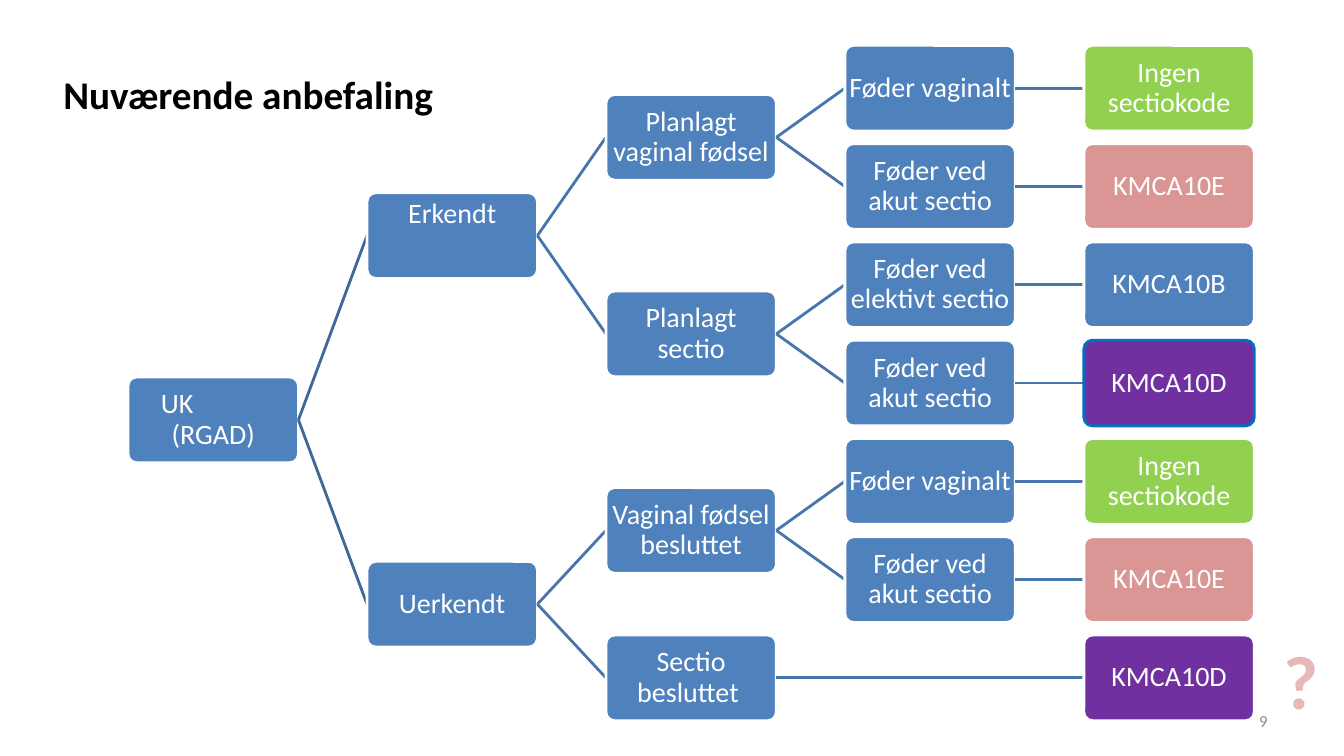
"""Build the decision tree slide of current section coding recommendations."""
from lxml import etree
from pptx import Presentation
from pptx.dml.color import RGBColor
from pptx.enum.shapes import MSO_CONNECTOR as CONN, MSO_SHAPE as SHAPE
from pptx.enum.text import MSO_ANCHOR as ANCHOR, PP_ALIGN as ALIGN
from pptx.oxml import parse_xml
from pptx.oxml.ns import qn
from pptx.util import Inches, Pt

WHITE = RGBColor(0xFF, 0xFF, 0xFF)
BLACK = RGBColor(0, 0, 0)
GRAY = RGBColor(0x8C, 0x8C, 0x8C)
BLUE = RGBColor(0x4F, 0x81, 0xBD)
GREEN = RGBColor(0x92, 0xD0, 0x50)
ROSE = RGBColor(0xD9, 0x96, 0x94)
PALE_ROSE = RGBColor(0xE6, 0xB9, 0xB8)
PURPLE = RGBColor(0x70, 0x30, 0xA0)
EDGE_BLUE = RGBColor(0x00, 0x70, 0xC0)
ROOT_LINE = RGBColor(0x3F, 0x67, 0x97)
TREE_LINE = RGBColor(0x48, 0x75, 0xAC)

LEFT, TOP = 1.27, 0.45
COL_STEP, ROW_STEP = 2.37, 0.975
BOX_W, BOX_H = 1.69, 0.85


def write(sp, text, size=20, color=WHITE, bold=False, align=ALIGN.CENTER,
          anchor=ANCHOR.MIDDLE, wrap=True, inset=None, spacing=None):
    tf = sp.text_frame
    tf.word_wrap = wrap
    tf.vertical_anchor = anchor
    if inset is not None:
        tf.margin_left = tf.margin_right = Inches(inset)
        tf.margin_top = tf.margin_bottom = Inches(inset)
    for i, line in enumerate(text.split("\n")):
        p = tf.add_paragraph() if i else tf.paragraphs[0]
        p.alignment = align
        p.line_spacing = spacing
        r = p.add_run()
        r.text = line
        r.font.name = "Calibri"
        r.font.size = Pt(size)
        r.font.bold = bold
        r.font.color.rgb = color
    return tf


prs = Presentation()
prs.slide_width, prs.slide_height = Inches(13.33), Inches(7.5)
s = prs.slides.add_slide(prs.slide_layouts[6])

# name, column, row, parent, text, fill
nodes = [
    ("root", 0, 3.375, None, "UK\n(RGAD)", BLUE),
    ("known", 1, 1.5, "root", "Erkendt", BLUE),
    ("plan_vag", 2, 0.5, "known", "Planlagt vaginal fødsel", BLUE),
    ("birth0", 3, 0, "plan_vag", "Føder vaginalt", BLUE),
    ("code0", 4, 0, "birth0", "Ingen sectiokode", GREEN),
    ("birth1", 3, 1, "plan_vag", "Føder ved akut sectio", BLUE),
    ("code1", 4, 1, "birth1", "KMCA10E", ROSE),
    ("plan_sec", 2, 2.5, "known", "Planlagt sectio", BLUE),
    ("birth2", 3, 2, "plan_sec", "Føder ved elektivt sectio", BLUE),
    ("code2", 4, 2, "birth2", "KMCA10B", BLUE),
    ("birth3", 3, 3, "plan_sec", "Føder ved akut sectio", BLUE),
    ("code3", 4, 3, "birth3", "KMCA10D", PURPLE),
    ("unknown", 1, 5.25, "root", "Uerkendt", BLUE),
    ("vag", 2, 4.5, "unknown", "Vaginal fødsel besluttet", BLUE),
    ("birth4", 3, 4, "vag", "Føder vaginalt", BLUE),
    ("code4", 4, 4, "birth4", "Ingen sectiokode", GREEN),
    ("birth5", 3, 5, "vag", "Føder ved akut sectio", BLUE),
    ("code5", 4, 5, "birth5", "KMCA10E", ROSE),
    ("sec", 2, 6, "unknown", "Sectio besluttet ", BLUE),
    ("code6", 4, 6, "sec", "KMCA10D", PURPLE),
]

boxes = {}
for name, col, row, parent, text, fill in nodes:
    x, y = Inches(LEFT + col * COL_STEP), Inches(TOP + row * ROW_STEP)
    if parent:
        link = s.shapes.add_connector(CONN.STRAIGHT, x, y, x, y)
        link.begin_connect(boxes[parent], 3)
        link.line.color.rgb = ROOT_LINE if parent == "root" else TREE_LINE
        link.line.width = Pt(2)
        etree.SubElement(link._element.spPr, qn("a:effectLst"))
    sp = s.shapes.add_shape(SHAPE.ROUNDED_RECTANGLE, x, y, Inches(BOX_W), Inches(BOX_H))
    sp.adjustments[0] = 0.1
    sp.shadow.inherit = False
    sp.fill.solid()
    sp.fill.fore_color.rgb = fill
    sp.line.color.rgb = EDGE_BLUE if name == "code3" else WHITE
    sp.line.width = Pt(2)
    write(sp, text, inset=0.01, spacing=0.9)
    if parent:
        link.end_connect(sp, 1)
    boxes[name] = sp

boxes["known"].text_frame.margin_bottom = Inches(0.43)
p = boxes["root"].text_frame.paragraphs[0]
p.alignment = ALIGN.LEFT
p._p.get_or_add_pPr().set("marL", str(Inches(0.29)))

sp = s.shapes.add_textbox(Inches(9.56), Inches(6.95), Inches(3.11), Inches(0.4))
write(sp, "9", size=12, color=GRAY, align=ALIGN.RIGHT)

sp = s.shapes.add_textbox(Inches(12.63), Inches(6.24), Inches(0.55), Inches(1.01))
tf = write(sp, "?", size=54, color=PALE_ROSE, bold=True, anchor=ANCHOR.TOP, wrap=False)
rPr = tf.paragraphs[0].runs[0].font._element
rPr.insert(0, parse_xml(
    '<a:ln xmlns:a="http://schemas.openxmlformats.org/drawingml/2006/main" w="22225">'
    '<a:solidFill><a:srgbClr val="C0504D"/></a:solidFill></a:ln>'))

sp = s.shapes.add_textbox(Inches(0.53), Inches(0.65), Inches(3.91), Inches(0.57))
write(sp, "Nuværende anbefaling", size=28, color=BLACK, bold=True, align=ALIGN.LEFT,
      anchor=ANCHOR.TOP, wrap=False)

prs.save("out.pptx")
